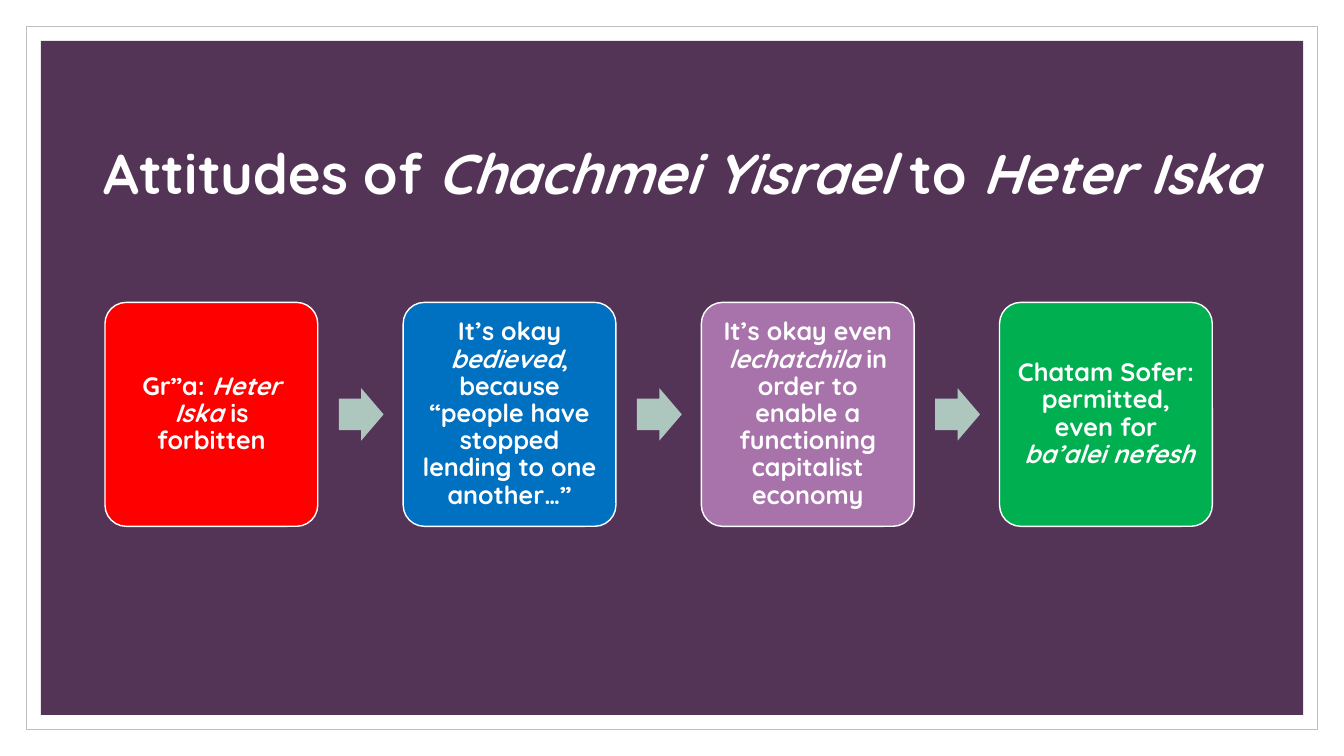
import pptx
import pptx.dml.color
import pptx.enum.shapes
import pptx.enum.text
import pptx.util

Pt = pptx.util.Pt
MSO = pptx.enum.shapes.MSO_SHAPE
COLORS = {
    "white": "FFFFFF", "frame": "BFBFBF", "panel": "543456", "arrow": "ADC6BE",
    "red": "FF0000", "blue": "0070C0", "mauve": "A773AA", "green": "00B050",
}


def rgb(name):
    return pptx.dml.color.RGBColor.from_string(COLORS[name])


def write(sp, runs, size, inset, rtl=False):
    """Fill a shape with one centred paragraph; every second run is italic."""
    tf = sp.text_frame
    tf.word_wrap = True
    tf.auto_size = pptx.enum.text.MSO_AUTO_SIZE.NONE
    tf.vertical_anchor = pptx.enum.text.MSO_ANCHOR.MIDDLE
    tf.margin_left = tf.margin_right = Pt(inset)
    tf.margin_top = tf.margin_bottom = Pt(5)
    p = tf.paragraphs[0]
    p.alignment = pptx.enum.text.PP_ALIGN.CENTER
    p.line_spacing = 0.9
    if rtl:
        p._p.get_or_add_pPr().set("rtl", "1")
    for i, text in enumerate(runs):
        r = p.add_run()
        r.text = text
        r.font.name = "Quicksand"
        r.font.size = Pt(size)
        r.font.bold = True
        r.font.italic = i % 2 == 1
        r.font.color.rgb = rgb("white")


prs = pptx.Presentation()
prs.slide_width, prs.slide_height = Pt(960), Pt(540)
s = prs.slides.add_slide(prs.slide_layouts[5])

# Title
title = s.shapes.title
title.left, title.top, title.width, title.height = Pt(57), Pt(72), Pt(859), Pt(108)
write(title, ["Attitudes of ", "Chachmei Yisrael", " to ", "Heter Iska"], 40, 7.2)

# Frame and panel, placed behind the title
for margin, fill, line in [(18.75, "white", "frame"), (29.25, "panel", None)]:
    sp = s.shapes.add_shape(MSO.RECTANGLE, Pt(margin), Pt(margin),
                            Pt(960 - 2 * margin), Pt(540 - 2 * margin))
    sp.shadow.inherit = False
    sp.fill.solid()
    sp.fill.fore_color.rgb = rgb(fill)
    if line:
        sp.line.color.rgb = rgb(line)
        sp.line.width = Pt(0.5)
    else:
        sp.line.fill.background()
    title.element.addprevious(sp.element)

# Row of opinions, with an arrow between neighbours
opinions = [
    ("red", True, ["Gr”a: ", "Heter Iska", " is forbitten"]),
    ("blue", False, ["It’s okay ", "bedieved",
                     ", because “people have stopped lending to one another…”"]),
    ("mauve", True, ["It’s okay even ", "lechatchila ",
                     "in order to enable a functioning capitalist economy"]),
    ("green", True, ["Chatam Sofer: permitted, even for ", "ba’alei nefesh "]),
]
LEFT, TOP, WIDTH, HEIGHT, PITCH = 75, 216, 152, 160, 213
ARROW_W, ARROW_H = 32, 37.5

for i, (color, rtl, runs) in enumerate(opinions):
    x = LEFT + i * PITCH
    card = s.shapes.add_shape(MSO.ROUNDED_RECTANGLE, Pt(x), Pt(TOP), Pt(WIDTH), Pt(HEIGHT))
    card.adjustments[0] = 0.1
    card.shadow.inherit = False
    card.fill.solid()
    card.fill.fore_color.rgb = rgb(color)
    card.line.color.rgb = rgb("white")
    card.line.width = Pt(1)
    write(card, runs, 18, 5, rtl)

    if i < len(opinions) - 1:
        arrow = s.shapes.add_shape(MSO.RIGHT_ARROW, Pt(x + WIDTH + 15),
                                   Pt(TOP + (HEIGHT - ARROW_H) / 2),
                                   Pt(ARROW_W), Pt(ARROW_H))
        arrow.adjustments[0] = 0.6
        arrow.adjustments[1] = 0.5
        arrow.shadow.inherit = False
        arrow.fill.solid()
        arrow.fill.fore_color.rgb = rgb("arrow")
        arrow.line.fill.background()

prs.save("out.pptx")
